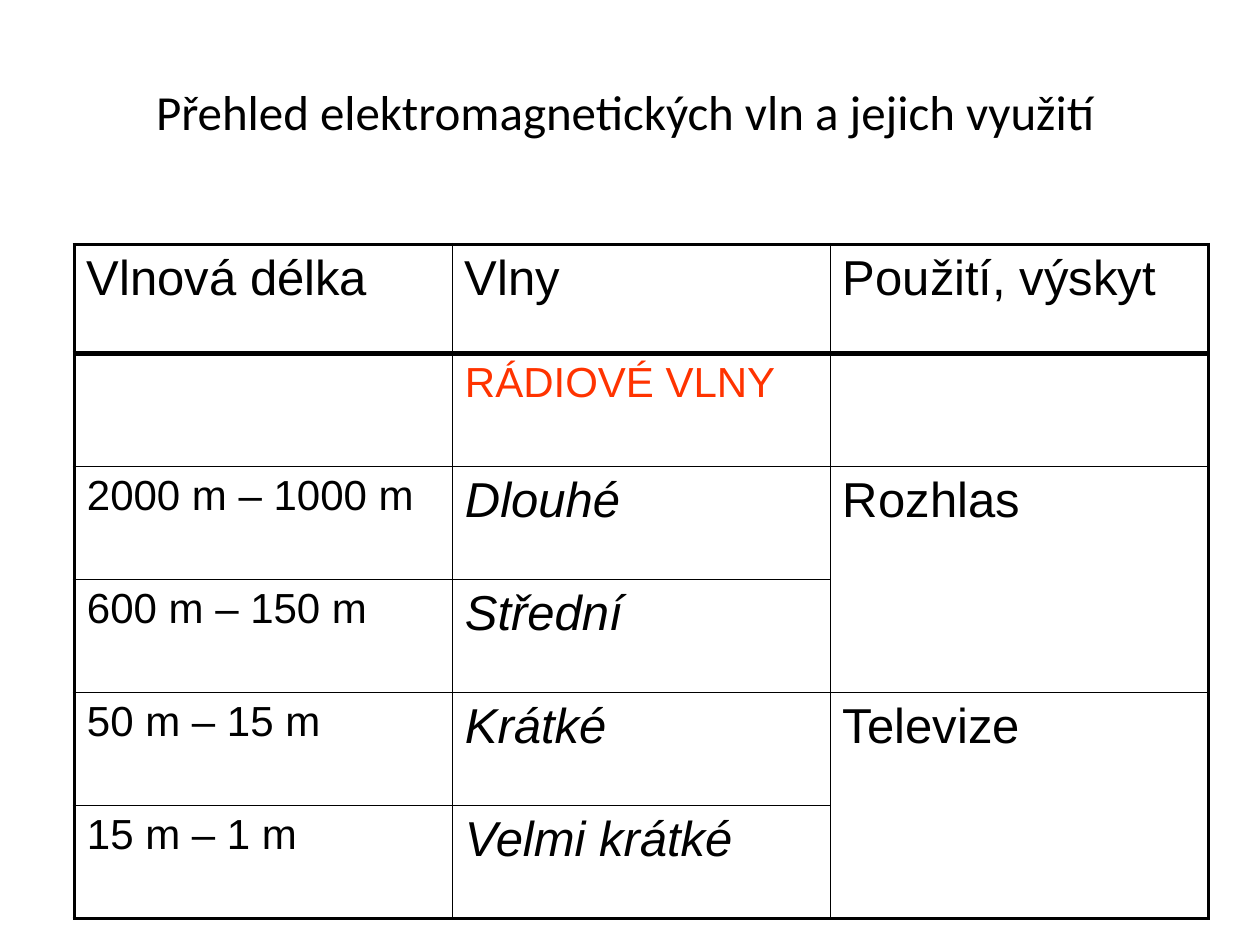
"""Build a slide with an overview of radio waves and their uses."""
from dataclasses import dataclass

from lxml import etree
from pptx import Presentation
from pptx.dml.color import RGBColor
from pptx.oxml import ns
from pptx.util import Pt


@dataclass(frozen=True)
class Theme:
    ink: str = "000000"
    red: str = "FF3300"
    head: str = "Calibri"
    body: str = "Arial"
    big: int = 28
    small: int = 24
    thin: float = 0.96
    edge: float = 2.21
    rule: float = 3


class Deck:
    def __init__(self, theme, wide, high):
        self.theme = theme
        self.file = Presentation()
        self.file.slide_width, self.file.slide_height = Pt(wide), Pt(high)
        self.slide = self.file.slides.add_slide(self.file.slide_layouts[6])

    def label(self, frame, words, face, size, color, slant=False):
        para = frame.paragraphs[0]
        para.text = words
        font = para.font
        font.name, font.size, font.italic = face, Pt(size), slant
        font.color.rgb = RGBColor.from_string(color)
        return para

    def title(self, words, left, top, wide, high):
        frame = self.slide.shapes.add_textbox(
            Pt(left), Pt(top), Pt(wide), Pt(high)).text_frame
        frame.word_wrap = True
        self.label(frame, words, self.theme.head, self.theme.big, self.theme.ink)

    def border(self, cell, widths):
        props = cell._tc.get_or_add_tcPr()
        for side, width in zip("LRTB", widths):
            line = etree.SubElement(props, ns.qn(f"a:ln{side}"), w=str(int(Pt(width))))
            fill = etree.SubElement(line, ns.qn("a:solidFill"))
            etree.SubElement(fill, ns.qn("a:srgbClr"), val=self.theme.ink)

    def table(self, rows, spans, left, top, wide, highs):
        look = self.theme
        count = len(rows[0])
        grid = self.slide.shapes.add_table(
            len(rows), count, Pt(left), Pt(top), Pt(wide), Pt(sum(highs))).table
        for col in grid.columns:
            col.width = Pt(wide / count)
        for row, high in zip(grid.rows, highs):
            row.height = Pt(high)
        for start, end in spans:
            grid.cell(*start).merge(grid.cell(*end))
        across = [look.edge] + [look.thin] * (count - 1) + [look.edge]
        down = [look.edge, look.rule] + [look.thin] * (len(rows) - 2) + [look.edge]
        for r, row in enumerate(rows):
            for c, (words, size, color, slant) in enumerate(row):
                cell = grid.cell(r, c)
                foot = r + (cell.span_height if cell.is_merge_origin else 1)
                self.border(cell, (across[c], across[c + 1], down[r], down[foot]))
                cell.fill.background()
                if words:
                    para = self.label(cell.text_frame, words, look.body, size, color, slant)
                    para.space_before = Pt(size / 5)


def main():
    look = Theme()
    deck = Deck(look, 720, 540)

    def plain(words, size=look.big, color=look.ink, slant=False):
        return words, size, color, slant

    waves = [
        ("2000 m – 1000 m", "Dlouhé", "Rozhlas"),
        ("600 m – 150 m", "Střední", ""),
        ("50 m – 15 m", "Krátké", "Televize"),
        ("15 m – 1 m", "Velmi krátké", ""),
    ]
    rows = [
        [plain(name) for name in ("Vlnová délka", "Vlny", "Použití, výskyt")],
        [plain(""), plain("RÁDIOVÉ VLNY", look.small, look.red), plain("")],
    ]
    rows += [[plain(span, look.small), plain(kind, slant=True), plain(use)]
             for span, kind, use in waves]
    spans = [((2, 2), (3, 2)), ((4, 2), (5, 2))]
    deck.table(rows, spans, 42.5, 139.7, 648, [62.4] + [64.6] * 5)
    deck.title("Přehled elektromagnetických vln a jejich využití", 82.1, 43.2, 566.6, 41)
    deck.file.save("out.pptx")


if __name__ == "__main__":
    main()
